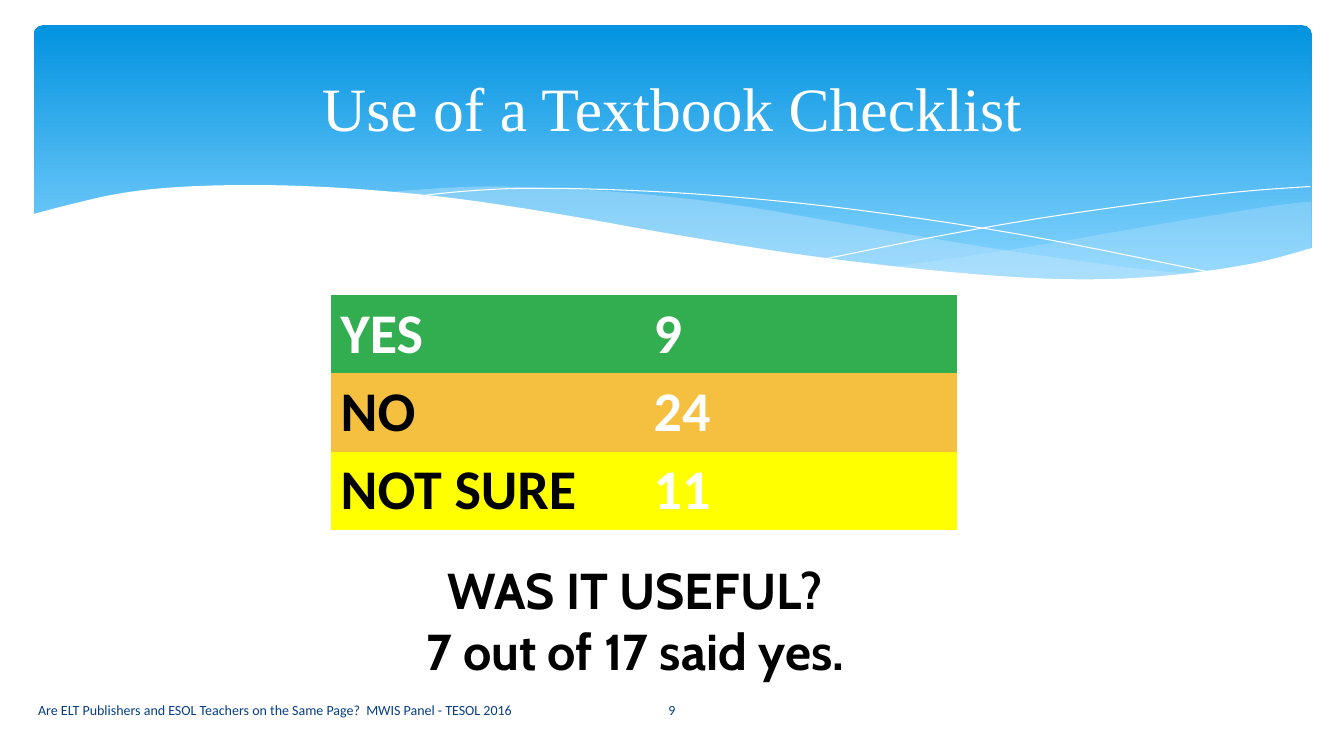
from dataclasses import dataclass

from lxml import etree
from pptx import Presentation
from pptx import util as u
from pptx.dml.color import RGBColor
from pptx.enum import shapes, text
from pptx.oxml.ns import qn


@dataclass
class Theme:
    band_top: str = "0293E0"
    band_bottom: str = "83D3FE"
    wave: str = "C6E7FC"
    white: str = "FFFFFF"
    black: str = "000000"
    footer: str = "073E87"
    green: str = "32AE51"
    orange: str = "F5C040"
    yellow: str = "FFFF00"
    title_size: int = 44
    table_size: int = 40
    note_size: int = 36
    footer_size: int = 10


theme = Theme()
rgb = RGBColor.from_string

presentation = Presentation()
presentation.slide_width = u.Inches(13.33)
presentation.slide_height = u.Inches(7.5)
slide = presentation.slides.add_slide(presentation.slide_layouts[5])

# Grid of 40 columns by 30 rows
COLUMN = presentation.slide_width / 40
ROW = presentation.slide_height / 30


def place(left, top, width, height):
    return [int(left * COLUMN), int(top * ROW), int(width * COLUMN), int(height * ROW)]


def style(frame, font, size, color, bold=False, align=text.PP_ALIGN.LEFT):
    frame.word_wrap = True
    for paragraph in frame.paragraphs:
        paragraph.alignment = align
        for run in paragraph.runs:
            run.font.name, run.font.size, run.font.bold = font, u.Pt(size), bold
            run.font.color.rgb = rgb(color)


# Blue gradient band
band = slide.shapes.add_shape(shapes.MSO_SHAPE.ROUNDED_RECTANGLE, *place(1, 1, 38.04, 10.8))
band.adjustments[0] = 0.034
band.shadow.inherit = False
band.line.fill.background()
band.fill.gradient()
band.fill.gradient_angle = 270
for stop, color, position in zip(
        band.fill.gradient_stops, (theme.band_top, theme.band_bottom), (0, 0.9)):
    stop.color.rgb = rgb(color)
    stop.position = position

# Waves: edges as knots on the grid, fill opacity in percent (None for a thin line)
right_wave = [
    [(39, 8), (37.95, 8.16), (36.24, 8.52), (34.41, 8.92), (31.14, 9.68), (28.23, 10.28),
     (26.46, 10.6)],
    [(26.46, 10.6), (29.28, 10.96), (32.13, 11.12), (34.56, 11.08), (35.58, 10.88),
     (37.14, 10.52), (39.03, 9.88)],
    [(39.03, 9.88), (39.03, 8)],
]
middle_wave = [
    [(35.7, 10.92), (33.48, 10.6), (29.67, 9.88), (25.17, 8.88), (22.2, 8.2), (19.56, 7.76),
     (16.8, 7.48), (14.46, 7.4), (12.54, 7.52), (11.46, 7.64)],
    [(11.46, 7.64), (13.68, 7.96), (16.17, 8.44), (17.97, 8.88), (21.18, 9.6), (24.06, 10.2),
     (26.61, 10.64), (29.43, 10.96), (31.83, 11.12), (33.54, 11.12), (35.7, 10.92)],
]
falling_line = [
    [(12.36, 7.8), (13.74, 7.6), (15.48, 7.48), (18, 7.52), (21.3, 7.76), (25.44, 8.32),
     (30.42, 9.32), (36.3, 10.88)],
]
rising_line = [
    [(24.54, 10.28), (27.81, 9.4), (31.05, 8.64), (34.65, 7.96), (36.96, 7.6), (39, 7.4)],
]
white_wave = [
    [(39.06, 9.84), (37.2, 10.48), (34.53, 10.96), (31.74, 11.08), (28.32, 10.8),
     (24.12, 10.16), (20.13, 9.32), (16.74, 8.52), (13.59, 7.88), (10.83, 7.52), (8.46, 7.36),
     (6.42, 7.36), (4.74, 7.48), (3.39, 7.72), (2.07, 8.12), (0.93, 8.52)],
    [(0.93, 8.52), (0.93, 13.16)],
    [(0.93, 13.16), (39.06, 13.16)],
]
STEPS = 5
for edges, color, opacity in (
        (right_wave, theme.wave, 29), (middle_wave, theme.wave, 40),
        (falling_line, theme.white, None), (rising_line, theme.white, None),
        (white_wave, theme.white, 100)):
    # Catmull-Rom curve through the knots of each edge
    points = [edges[0][0]]
    for edge in edges:
        knots = [edge[0], *edge, edge[-1]]
        for a, b, c, d in zip(knots, knots[1:], knots[2:], knots[3:]):
            for step in range(1, STEPS + 1):
                t = step / STEPS
                points.append([
                    (2 * q + (r - p) * t + (2 * p - 5 * q + 4 * r - s) * t ** 2
                     + (3 * q - p - 3 * r + s) * t ** 3) / 2
                    for p, q, r, s in zip(a, b, c, d)])
    outline = [(int(x * COLUMN), int(y * ROW)) for x, y in points]
    builder = slide.shapes.build_freeform(*outline[0])
    builder.add_line_segments(outline[1:], close=opacity is not None)
    wave = builder.convert_to_shape()
    wave.shadow.inherit = False
    if opacity is None:
        wave.fill.background()
        wave.line.color.rgb = rgb(color)
        wave.line.width = u.Pt(0)
        continue
    wave.line.fill.background()
    wave.fill.solid()
    wave.fill.fore_color.rgb = rgb(color)
    if opacity < 100:
        fill_color = wave.element.spPr.find(qn("a:solidFill")).find(qn("a:srgbClr"))
        etree.SubElement(fill_color, qn("a:alpha"), val=str(opacity * 1000))

# Title, brought in front of the band
title = slide.shapes.title
title.left, title.top, title.width, title.height = place(2, 1.48, 36, 5.48)
title.text_frame.text = "Use of a Textbook Checklist"
title.text_frame.vertical_anchor = text.MSO_ANCHOR.MIDDLE
style(title.text_frame, "Times New Roman", theme.title_size, theme.white,
      align=text.PP_ALIGN.CENTER)
title.element.getparent().append(title.element)

# Answer table, without a table style
answers = [
    ("YES", "9", theme.green, theme.white),
    ("NO", "24", theme.orange, theme.black),
    ("NOT SURE", "11", theme.yellow, theme.black),
]
table = slide.shapes.add_table(len(answers), 2, *place(9.84, 11.7, 18.63, 9.33)).table
table.first_row = table.horz_banding = False
style_id = table._tbl.tblPr.find(qn("a:tableStyleId"))
style_id.text = "{2D5ABB26-0587-4C30-8999-92F81FD0307C}"
for row, (answer, count, fill, label_color) in enumerate(answers):
    for column, (words, color) in enumerate(((answer, label_color), (count, theme.white))):
        cell = table.cell(row, column)
        cell.fill.solid()
        cell.fill.fore_color.rgb = rgb(fill)
        cell.text_frame.text = words
        style(cell.text_frame, "Calibri", theme.table_size, color, bold=True)

# Follow-up question
note = slide.shapes.add_textbox(*place(9.84, 22, 18.63, 5.24)).text_frame
note.text = "WAS IT USEFUL?\n7 out of 17 said yes."
note.margin_right = int(0.8 * COLUMN)
style(note, "Cabin", theme.note_size, theme.black, bold=True, align=text.PP_ALIGN.CENTER)

# Footer and slide number
for words, left, width, align in (
        ("Are ELT Publishers and ESOL Teachers on the Same Page?  MWIS Panel - TESOL 2016",
         0.84, 16.56, text.PP_ALIGN.LEFT),
        ("9", 17.46, 5.07, text.PP_ALIGN.CENTER)):
    footer = slide.shapes.add_textbox(*place(left, 27.36, width, 1.6)).text_frame
    footer.text = words
    footer.vertical_anchor = text.MSO_ANCHOR.MIDDLE
    style(footer, "Calibri", theme.footer_size, theme.footer, align=align)

presentation.save("out.pptx")
